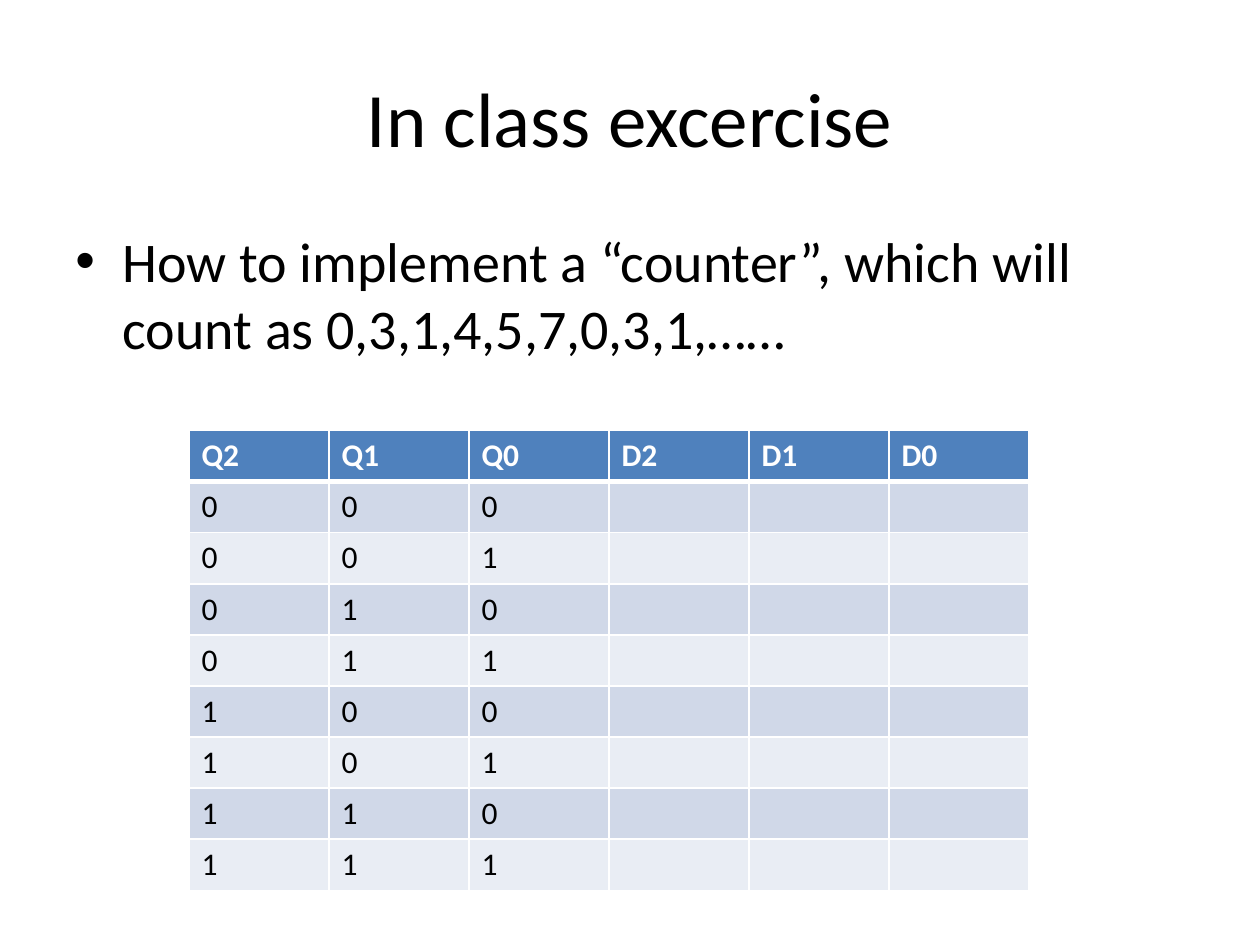
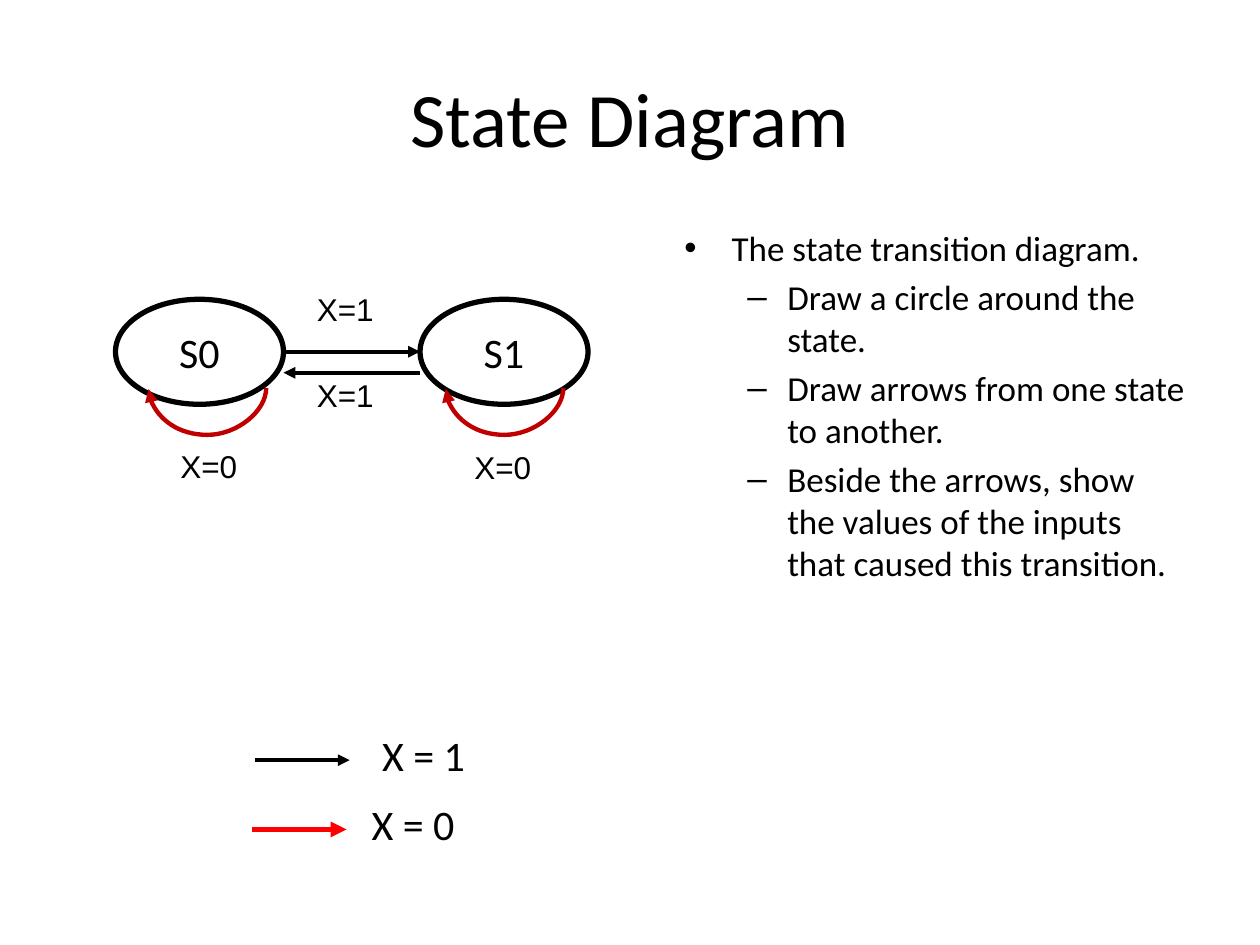
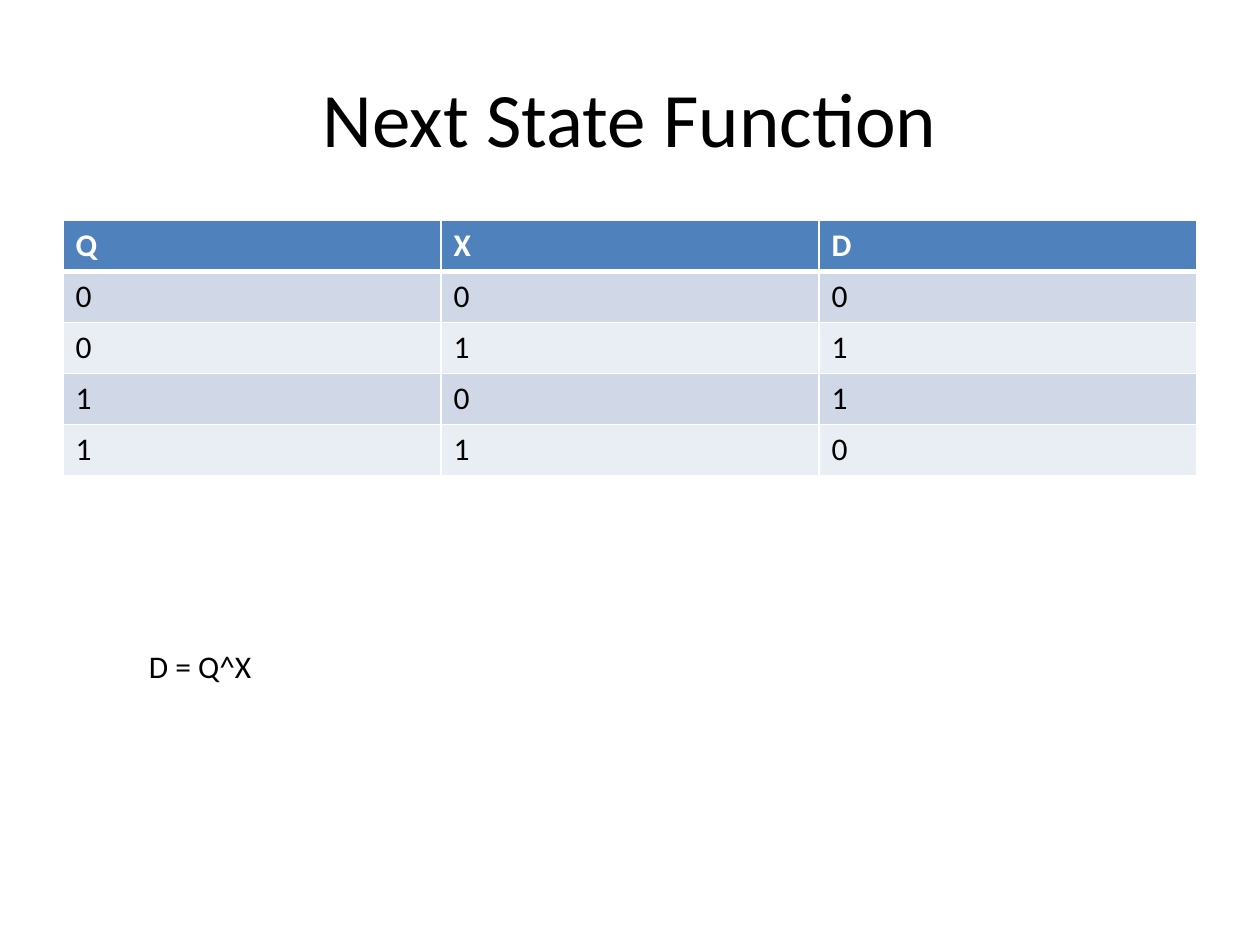
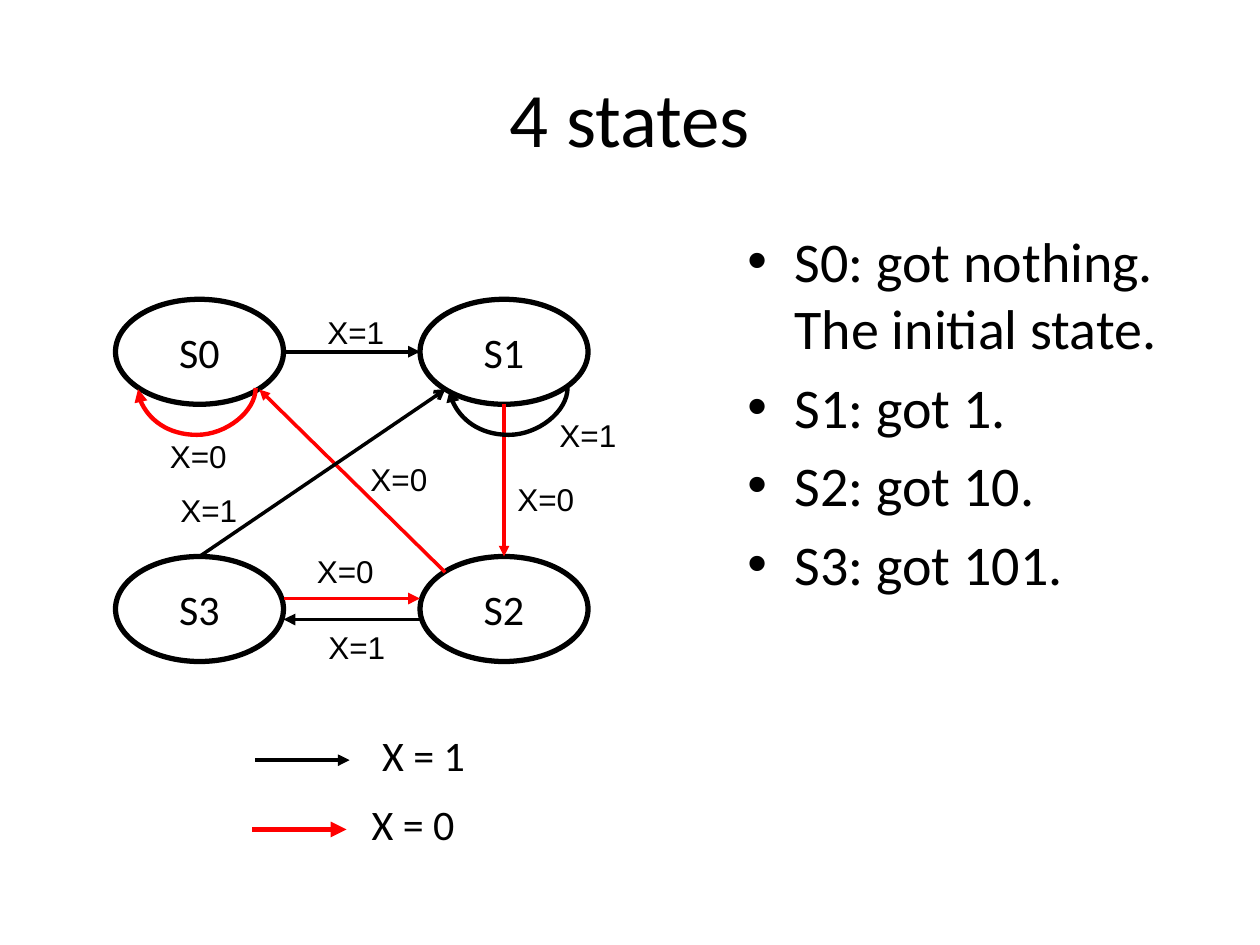
from pptx import Presentation
from pptx.dml.color import RGBColor
from pptx.enum.shapes import MSO_CONNECTOR as Connector, MSO_SHAPE as Shape
from pptx.enum.text import MSO_ANCHOR as Anchor, MSO_AUTO_SIZE as AutoSize, PP_ALIGN as Align
from pptx.oxml.ns import qn
from pptx.util import Emu, Pt
from lxml.etree import SubElement

# Shared style
EMU_PER_PX = 7620  # 120 px to the inch
COLORS = {
    "black": "000000",
    "white": "FFFFFF",
    "red": "FF0000",
    "dark_red": "C00000",
    "header": "4F81BD",
    "band_dark": "D0D8E8",
    "band_light": "E9EDF4",
}
BULLETS = [("•", 45, 45), ("–", 98, 38)]  # mark, left margin, hanging indent
LABEL_SIZE = (79, 48)
LEGEND_SIZE = (104, 61)
STATE_SIZE = (160, 100)
STATE_COLUMNS = (110, 400)
STATE_ROWS = (285, 530)


def px(length):
    return Emu(length * EMU_PER_PX)


def rgb(name):
    return RGBColor.from_string(COLORS[name])


def write(paragraph, text, size=18, font="Calibri", color="black", bold=False,
          align=Align.LEFT):
    """Add one formatted run to a paragraph."""
    paragraph.alignment = align
    run = paragraph.add_run()
    run.text = text
    run.font.size = Pt(size)
    run.font.name = font
    run.font.bold = bold
    run.font.color.rgb = rgb(color)


class Deck:
    def __init__(self, width, height):
        self.presentation = Presentation()
        self.presentation.slide_width = px(width)
        self.presentation.slide_height = px(height)
        self.slide = None

    def add_slide(self, title):
        layout = self.presentation.slide_layouts[6]
        self.slide = self.presentation.slides.add_slide(layout)
        frame = self.text_frame(60, 36, 1080, 150)
        frame.vertical_anchor = Anchor.MIDDLE
        write(frame.paragraphs[0], title, size=44, align=Align.CENTER)

    def text_frame(self, left, top, width, height):
        shape = self.slide.shapes.add_textbox(px(left), px(top), px(width), px(height))
        shape.text_frame.word_wrap = True
        return shape.text_frame

    def label(self, text, left, top, box=LABEL_SIZE, **text_format):
        """A single line in a box that fits its text."""
        frame = self.text_frame(left, top, *box)
        frame.word_wrap = False
        frame.auto_size = AutoSize.SHAPE_TO_FIT_TEXT
        write(frame.paragraphs[0], text, **text_format)

    def bullets(self, left, top, width, height, items, size):
        """A list of (level, text) items."""
        frame = self.text_frame(left, top, width, height)
        for index, (level, text) in enumerate(items):
            paragraph = frame.add_paragraph() if index else frame.paragraphs[0]
            mark, margin, hanging = BULLETS[level]
            properties = paragraph._p.get_or_add_pPr()
            properties.set("marL", str(px(margin)))
            properties.set("indent", str(-px(hanging)))
            SubElement(properties, qn("a:buFont")).set("typeface", "Arial")
            SubElement(properties, qn("a:buChar")).set("char", mark)
            paragraph.level = level
            if index:
                paragraph.space_before = Pt(size * 0.2)
            write(paragraph, text, size=size)

    def table(self, left, top, width, height, rows):
        column_count = len(rows[0])
        table = self.slide.shapes.add_table(
            len(rows), column_count, px(left), px(top), px(width), px(height)).table
        for column in table.columns:
            column.width = px(width) // column_count
        for row_index, values in enumerate(rows):
            table.rows[row_index].height = px(height) // len(rows)
            for column_index, value in enumerate(values):
                self.cell(table.cell(row_index, column_index), value, row_index)

    def cell(self, cell, value, row_index):
        is_header = row_index == 0
        if value:
            write(cell.text_frame.paragraphs[0], value, bold=is_header,
                  color="white" if is_header else "black")
        # Borders come before the fill in the cell properties
        properties = cell._tc.get_or_add_tcPr()
        thick_side = {0: "lnB", 1: "lnT"}.get(row_index)
        for side in ("lnL", "lnR", "lnT", "lnB"):
            border = SubElement(properties, qn(f"a:{side}"))
            border.set("w", str(Pt(3 if side == thick_side else 1)))
            fill = SubElement(border, qn("a:solidFill"))
            SubElement(fill, qn("a:srgbClr")).set("val", COLORS["white"])
        band = "band_dark" if row_index % 2 else "band_light"
        cell.fill.solid()
        cell.fill.fore_color.rgb = rgb("header" if is_header else band)

    def state(self, name, column, row):
        shape = self.slide.shapes.add_shape(
            Shape.OVAL, px(STATE_COLUMNS[column]), px(STATE_ROWS[row]),
            *map(px, STATE_SIZE))
        shape.shadow.inherit = False
        shape.fill.background()
        shape.line.color.rgb = rgb("black")
        shape.line.width = Pt(3)
        frame = shape.text_frame
        frame.word_wrap = False
        frame.vertical_anchor = Anchor.MIDDLE
        write(frame.paragraphs[0], name, size=24, align=Align.CENTER)

    def arrow(self, start, end, color="black", width=2.25, head="triangle",
              kind=Connector.STRAIGHT):
        connector = self.slide.shapes.add_connector(kind, *map(px, start + end))
        connector.line.color.rgb = rgb(color)
        connector.line.width = Pt(width)
        line = connector.line._get_or_add_ln()
        SubElement(line, qn("a:tailEnd")).set("type", head)
        SubElement(connector._element.spPr, qn("a:effectLst"))
        return connector

    def loop(self, right, color, top=370, half_span=56, depth=45):
        """A curved arrow under a state, from right to left."""
        center = right - half_span
        connector = self.arrow((center, top - half_span), (center + 1, top + half_span),
                               color, 2.5, kind=Connector.CURVE)
        properties = connector._element.spPr
        properties.find(qn("a:xfrm")).set("rot", str(90 * 60000))
        # The bend is a multiple of the connector's width of 1 px
        adjustments = properties.find(qn("a:prstGeom")).get_or_add_avLst()
        guide = SubElement(adjustments, qn("a:gd"))
        guide.set("name", "adj1")
        guide.set("fmla", f"val {depth * 100000}")

    def legend(self):
        self.arrow((243, 724), (333, 724))
        self.label("X = 1", 352, 689, LEGEND_SIZE, size=24)
        self.arrow((240, 790), (330, 790), "red", 3)
        self.label("X = 0", 342, 755, LEGEND_SIZE, size=24)

    def inputs(self, places):
        """Transition labels: (input value, left, top)."""
        for value, left, top in places:
            self.label(f"X={value}", left, top, font="Arial")


def main():
    deck = Deck(1200, 900)

    # Counter exercise
    deck.add_slide("In class excercise")
    deck.bullets(60, 210, 1080, 140, [
        (0, "How to implement a “counter”, which will count as 0,3,1,4,5,7,0,3,1,……"),
    ], size=32)
    counter_rows = [["Q2", "Q1", "Q0", "D2", "D1", "D0"]]
    counter_rows += [list(f"{number:03b}") + [""] * 3 for number in range(8)]
    deck.table(180, 410, 800, 438, counter_rows)

    # Two-state diagram
    deck.add_slide("State Diagram")
    deck.bullets(640, 210, 500, 594, [
        (0, "The state transition diagram."),
        (1, "Draw a circle around the state."),
        (1, "Draw arrows from one state to another."),
        (1, "Beside the arrows, show the values of the inputs that caused this transition."),
    ], size=20)
    deck.state("S0", 0, 0)
    deck.state("S1", 1, 0)
    deck.arrow((270, 335), (400, 335))
    deck.arrow((400, 355), (270, 355))
    deck.loop(536, "dark_red")
    deck.loop(253, "dark_red")
    deck.legend()
    deck.inputs([(1, 290, 270), (0, 160, 420), (1, 290, 352), (0, 440, 421)])

    # Truth table of the next state
    deck.add_slide("Next State Function")
    deck.table(60, 210, 1080, 243, ["QXD", "000", "011", "101", "110"])
    deck.label("D = Q^X", 130, 610, (139, 48))

    # Four-state diagram
    deck.add_slide("4 states")
    deck.bullets(700, 210, 440, 594, [
        (0, "S0: got nothing. The initial state."),
        (0, "S1: got 1."),
        (0, "S2: got 10."),
        (0, "S3: got 101."),
    ], size=32)
    for name, column, row in [("S0", 0, 0), ("S1", 1, 0), ("S2", 1, 1), ("S3", 0, 1)]:
        deck.state(name, column, row)
    deck.arrow((270, 335), (400, 335))
    deck.loop(243, "red")
    deck.legend()
    deck.arrow((480, 385), (480, 530), "red", 2)
    deck.arrow((400, 590), (270, 590))
    deck.arrow((424, 545), (247, 371), "red", 2)
    deck.arrow((270, 570), (400, 570), "red")
    deck.loop(540, "black")
    deck.arrow((190, 530), (424, 371), width=2, head="arrow")
    deck.inputs([
        (0, 150, 410), (0, 341, 432), (0, 481, 451), (0, 290, 520),
        (1, 301, 592), (1, 300, 292), (1, 521, 390), (1, 160, 462),
    ])

    deck.presentation.save("out.pptx")


if __name__ == "__main__":
    main()
